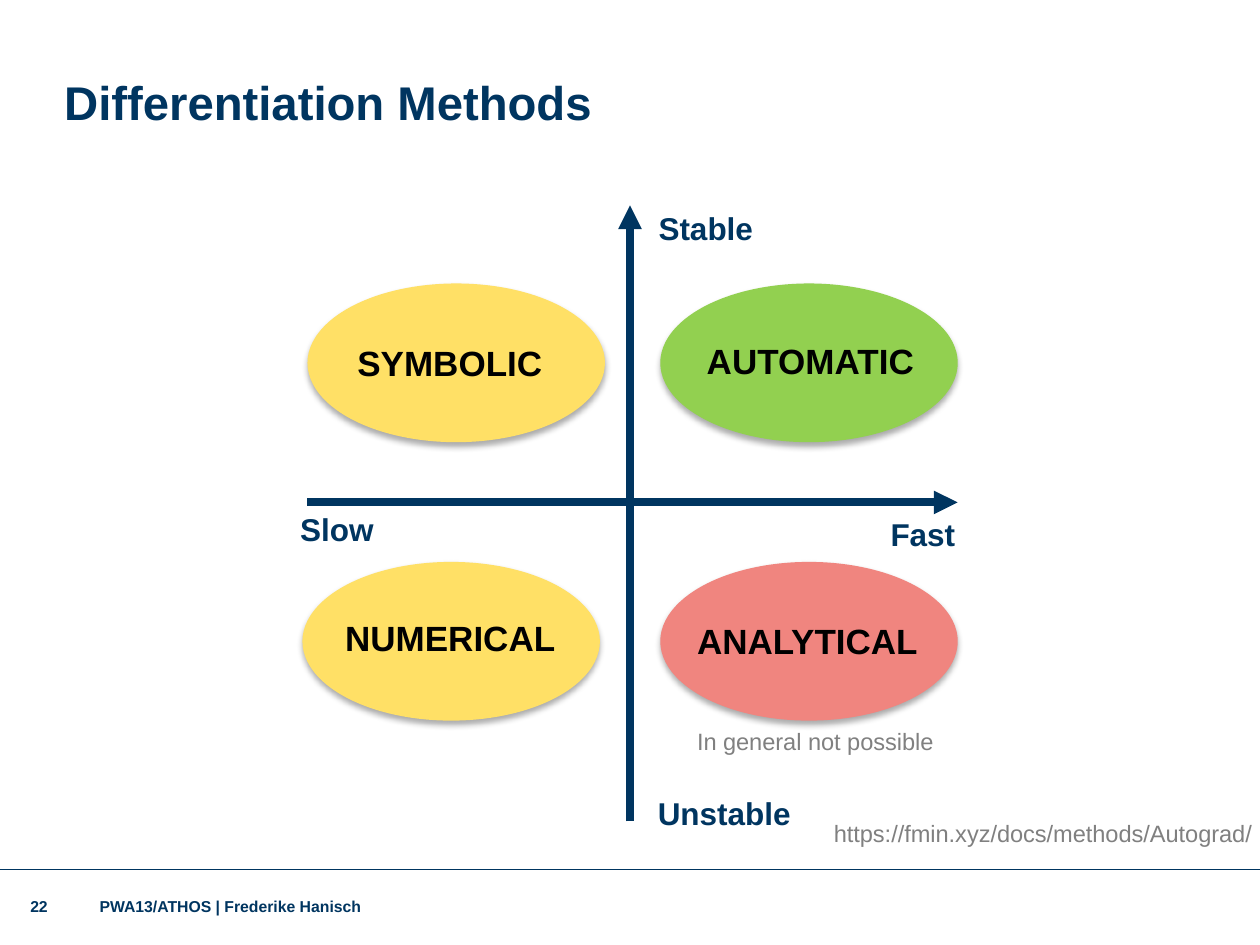
"""Build a slide that ranks differentiation methods by speed and stability."""
from lxml import etree
from pptx import Presentation
from pptx.dml.color import RGBColor
from pptx.enum import shapes, text
from pptx.oxml import ns
from pptx.util import Pt

NAVY, GRAY, BLACK = "003560", "808080", "000000"
YELLOW, GREEN, RED = "FFE066", "92D050", "F0857F"
WIDTH, HEIGHT = 720, 540
ELLIPSE_SIZE = (170, 90.7)
INSETS = (7.2, 3.6, 7.2, 3.6)
NO_INSETS = (0, 0, 0, 0)

ELLIPSES = [
    (172.8, 321.1, YELLOW),
    (377.3, 162, GREEN),
    (377.3, 321.1, RED),
    (175.7, 162, YELLOW),
]
AXES = [
    ((175.7, 287.1), (547.2, 287.1)),
    ((360, 469.4), (360, 117.4)),
]
AXIS_LABELS = [
    ("Fast", (501.8, 290.9, 57, 29)),
    ("Stable", (369.2, 115.9, 81.5, 29)),
    ("Unstable", (368.8, 450, 98.5, 29)),
    ("Slow", (164.4, 288, 57, 29)),
]
METHODS = [
    ("SYMBOLIC", (197.1, 191.5, 127.5, 31.5)),
    ("AUTOMATIC", (396.8, 190.5, 139, 31.5)),
    ("NUMERICAL", (190.1, 349, 139, 31.5)),
    ("ANALYTICAL", (391.2, 350.5, 156, 31.5)),
]
FOOTER = [
    ("PWA13/ATHOS | Frederike Hanisch", (56.9, 514, 579, 8)),
    ("22", (17.3, 507, 42.5, 22)),
]


def color(value):
    return RGBColor.from_string(value)


def add_text(slide, content, box, size=18, ink=NAVY, bold=True, insets=INSETS,
             anchor=text.MSO_ANCHOR.TOP):
    frame = slide.shapes.add_textbox(*map(Pt, box)).text_frame
    frame.word_wrap = True
    frame.vertical_anchor = anchor
    (frame.margin_left, frame.margin_top,
     frame.margin_right, frame.margin_bottom) = map(Pt, insets)
    paragraph = frame.paragraphs[0]
    paragraph.text = content
    font = paragraph.runs[0].font
    font.name, font.size, font.bold = "Arial", Pt(size), bold
    font.color.rgb = color(ink)


def add_ellipse(slide, left, top, fill):
    shape = slide.shapes.add_shape(
        shapes.MSO_SHAPE.OVAL, *map(Pt, (left, top, *ELLIPSE_SIZE)))
    shape.fill.solid()
    shape.fill.fore_color.rgb = color(fill)
    shape.line.fill.background()
    shape.shadow.inherit = False
    effects = shape._element.spPr.find(ns.qn("a:effectLst"))
    shadow = etree.SubElement(
        effects, ns.qn("a:outerShdw"), blurRad=str(Pt(3.5)), dist=str(Pt(2.2)),
        dir="5400000", algn="ctr", rotWithShape="0")
    tint = etree.SubElement(shadow, ns.qn("a:srgbClr"), val=BLACK)
    etree.SubElement(tint, ns.qn("a:alpha"), val="32000")


def add_line(slide, start, end, width, arrow=False):
    connector = slide.shapes.add_connector(
        shapes.MSO_CONNECTOR.STRAIGHT, *map(Pt, (*start, *end)))
    connector.line.color.rgb = color(NAVY)
    connector.line.width = Pt(width)
    if arrow:
        etree.SubElement(connector.line._get_or_add_ln(), ns.qn("a:tailEnd"),
                         type="triangle")
    etree.SubElement(connector._element.spPr, ns.qn("a:effectLst"))


def main():
    presentation = Presentation()
    presentation.slide_width, presentation.slide_height = Pt(WIDTH), Pt(HEIGHT)
    slide = presentation.slides.add_slide(presentation.slide_layouts[6])

    add_line(slide, (0, 496.8), (WIDTH, 496.8), 0.5)
    for content, box in FOOTER:
        add_text(slide, content, box, size=9, insets=NO_INSETS,
                 anchor=text.MSO_ANCHOR.MIDDLE)
    for ellipse in ELLIPSES:
        add_ellipse(slide, *ellipse)
    add_text(slide, "Differentiation Methods", (36.7, 41.8, 595.4, 49), size=27,
             insets=NO_INSETS)
    for start, end in AXES:
        add_line(slide, start, end, 4.5, arrow=True)
    for content, box in AXIS_LABELS:
        add_text(slide, content, box)
    for content, box in METHODS:
        add_text(slide, content, box, size=20, ink=BLACK)
    add_text(slide, "https://fmin.xyz/docs/methods/Autograd/",
             (469.4, 464.4, 250.6, 23.8), size=13.5, ink=GRAY, bold=False,
             insets=(7.2, 3.6, 0, 3.6))
    add_text(slide, "In general not possible", (391.2, 411.8, 156, 23.8),
             size=13.5, ink=GRAY, bold=False)

    presentation.save("out.pptx")


if __name__ == "__main__":
    main()
